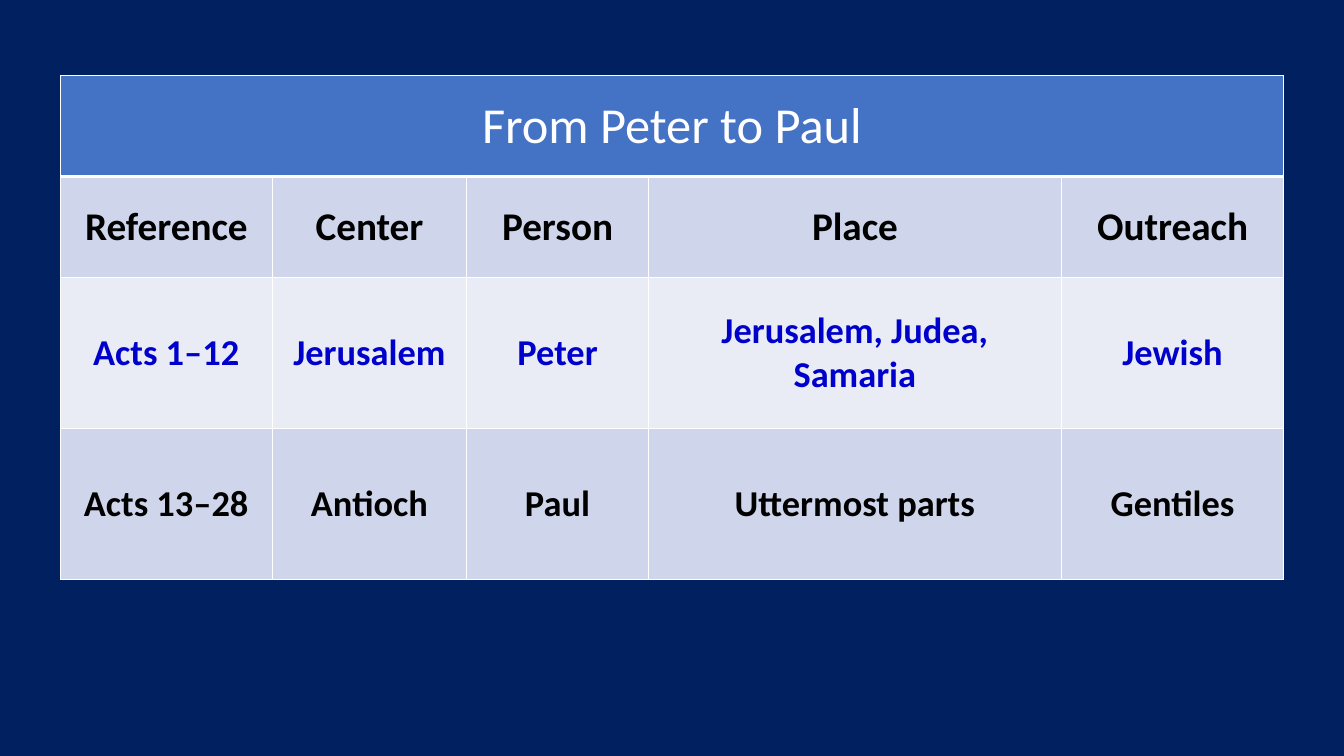
from lxml.etree import SubElement
from pptx import Presentation
from pptx.dml.color import RGBColor
from pptx.enum.text import MSO_ANCHOR as Anchor, PP_ALIGN as Align
from pptx.oxml.ns import qn
from pptx.util import Pt

UNIT = 9144  # EMU per px, 100 px to the inch
WIDTHS = [210, 193, 180, 410, 220]
HEIGHTS = [100, 100, 150, 150]
TITLE = "From Peter to Paul"
# Each row: fill, text colour, size, texts
ROWS = [
    ("CFD5EA", "000000", 28,
     ["Reference", "Center", "Person", "Place", "Outreach"]),
    ("E9EBF5", "0000CC", 26,
     ["Acts 1–12", "Jerusalem", "Peter", "Jerusalem, Judea, Samaria", "Jewish"]),
    ("CFD5EA", "000000", 26,
     ["Acts 13–28", "Antioch", "Paul", "Uttermost parts", "Gentiles"]),
]


def px(n):
    return int(n * UNIT)


def paint(fill, color):
    fill.solid()
    fill.fore_color.rgb = RGBColor.from_string(color)


def write(frame, text, size=26, color="000000", bold=True, font="Calibri"):
    para = frame.paragraphs[0]
    para.alignment = Align.CENTER
    run = para.add_run()
    run.text = text
    run.font.size = Pt(size)
    run.font.bold = bold
    run.font.name = font
    paint(run.font.fill, color)


def edge(cell, **widths):
    """Draw white borders, 1 pt unless a side (L, R, T, B) names a width."""
    props = cell._tc.get_or_add_tcPr()
    for side in "LRTB":
        line = SubElement(props, qn(f"a:ln{side}"), w=str(Pt(widths.get(side, 1))))
        solid = SubElement(line, qn("a:solidFill"))
        SubElement(solid, qn("a:srgbClr"), val="FFFFFF")


def style(cell, fill, **widths):
    edge(cell, **widths)
    paint(cell.fill, fill)
    cell.vertical_anchor = Anchor.MIDDLE


def add_grid(slide, left, top):
    wide, high = sum(WIDTHS), sum(HEIGHTS)
    grid = slide.shapes.add_table(
        len(HEIGHTS), len(WIDTHS), px(left), px(top), px(wide), px(high)).table
    for col, width in zip(grid.columns, WIDTHS):
        col.width = px(width)
    for row, height in zip(grid.rows, HEIGHTS):
        row.height = px(height)

    for cell in grid.rows[0].cells:
        style(cell, "4472C4", B=3)
    head = grid.cell(0, 0)
    head.merge(grid.cell(0, len(WIDTHS) - 1))
    write(head.text_frame, TITLE, size=36, color="FFFFFF", bold=False)

    for r, (fill, color, size, texts) in enumerate(ROWS, 1):
        for c, text in enumerate(texts):
            cell = grid.cell(r, c)
            style(cell, fill, T=3 if r == 1 else 1)
            write(cell.text_frame, text, size=size, color=color)


def main():
    deck = Presentation()
    deck.slide_width, deck.slide_height = px(1333), px(750)
    slide = deck.slides.add_slide(deck.slide_layouts[6])
    paint(slide.background.fill, "002060")
    add_grid(slide, 60, 75)
    deck.save("out.pptx")


if __name__ == "__main__":
    main()
